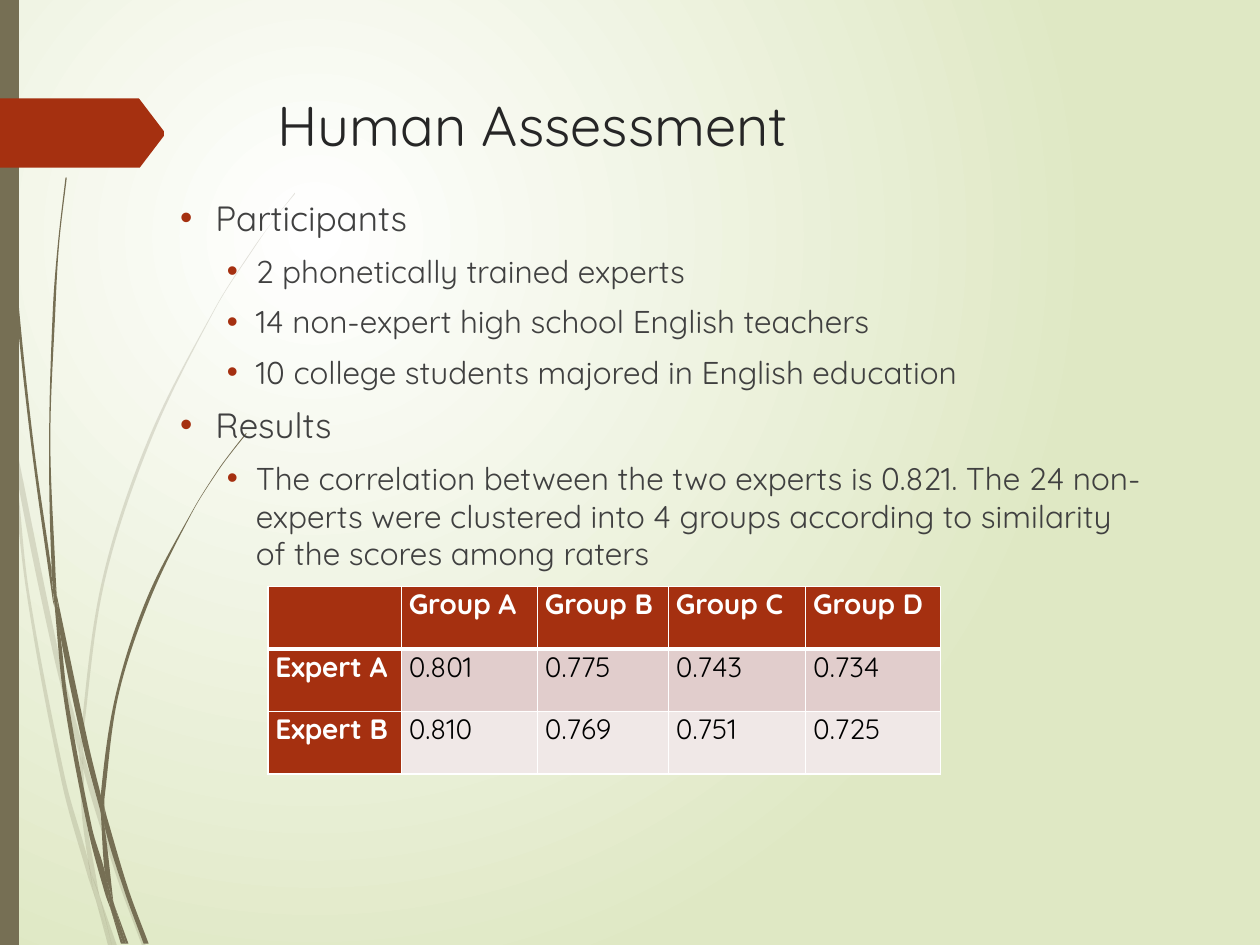
from dataclasses import dataclass
from math import dist

from lxml import etree
from pptx import Presentation
from pptx.dml.color import RGBColor
from pptx.enum.shapes import MSO_SHAPE
from pptx.enum.text import MSO_ANCHOR, MSO_AUTO_SIZE, PP_ALIGN
from pptx.oxml.ns import qn
from pptx.util import Emu, Inches, Pt

RECTANGLE = MSO_SHAPE.RECTANGLE
TOP, NO_FIT = MSO_ANCHOR.TOP, MSO_AUTO_SIZE.NONE
LEFT, JUSTIFY = PP_ALIGN.LEFT, PP_ALIGN.JUSTIFY

FONT = "Quicksand"
WHITE = RGBColor(0xFF, 0xFF, 0xFF)
BLACK = RGBColor(0, 0, 0)
PALE_GREEN = RGBColor(0xDF, 0xE8, 0xC4)
OLIVE = RGBColor(0x76, 0x6F, 0x54)
RUST = RGBColor(0xA5, 0x30, 0x10)
TITLE_GRAY = RGBColor(0x26, 0x26, 0x26)
BODY_GRAY = RGBColor(0x40, 0x40, 0x40)
BAND_FILLS = (RGBColor(0xE1, 0xCD, 0xCC), RGBColor(0xF0, 0xE8, 0xE7))

WIDTH, HEIGHT = Inches(10), Inches(7.5)
Points = list[tuple[float, float]]


@dataclass(frozen=True)
class Frame:
    """A box in percent of the slide's width and height."""
    left: float
    top: float
    width: float
    height: float

    def lengths(self) -> tuple[Emu, Emu, Emu, Emu]:
        return (Emu(int(WIDTH * self.left / 100)), Emu(int(HEIGHT * self.top / 100)),
                Emu(int(WIDTH * self.width / 100)), Emu(int(HEIGHT * self.height / 100)))


@dataclass(frozen=True)
class Blade:
    """A blade of grass: one edge out, the other edge back, in inches."""
    out: Points
    back: Points


@dataclass(frozen=True)
class Level:
    size: int
    margin: float
    hanging: float


TITLE_FRAME = Frame(21.3, 9.07, 73.1, 18.67)
BODY_FRAME = Frame(13.6, 20.27, 77.9, 61.87)
TABLE_FRAME = Frame(21.25, 62.07, 53.4, 19.87)
BAR_FRAME = Frame(0, 0, 1.5, 100)
TAG = [(0, 0.78), (1.1, 0.78), (1.11, 0.79), (1.3, 1.04), (1.3, 1.08), (1.11, 1.33), (0, 1.33)]

LEVELS = (Level(20, 0.28, 0.28), Level(18, 0.6, 0.23))
BODY = (
    (0, "Participants"),
    (1, "2 phonetically trained experts"),
    (1, "14 non-expert high school English teachers"),
    (1, "10 college students majored in English education"),
    (0, "Results"),
    (1, "The correlation between the two experts is 0.821. The 24 non-experts were clustered "
        "into 4 groups according to similarity of the scores among raters"),
)
COLUMNS = (1.06, 1.08, 1.04, 1.09, 1.07)
SCORES = (
    ("", "Group A", "Group B", "Group C", "Group D"),
    ("Expert A", "0.801", "0.775", "0.743", "0.734"),
    ("Expert B", "0.810", "0.769", "0.751", "0.725"),
)

FAINT_GRASS = (
    Blade([(0.08, 3.5), (0.06, 3.22), (0, 2.82)], [(0, 2.99), (0.08, 3.44)]),
    Blade([(0.11, 3.45), (0.13, 3.76), (0.43, 5.22), (0.63, 5.99)],
          [(0.64, 5.86), (0.47, 5.2), (0.11, 3.45)]),
    Blade([(0.66, 5.96), (0.66, 6.1), (0.92, 6.94), (1.13, 7.51)],
          [(1.16, 7.51), (0.95, 6.92), (0.69, 6.07)]),
    Blade([(0.79, 7.11), (0.89, 7.51)], [(0.93, 7.51), (0.79, 7.11)]),
    Blade([(0.08, 3.5), (0.21, 4.7), (0.49, 6.21), (0.69, 6.93), (0.76, 7.14)],
          [(0.74, 7.07), (0.7, 6.83), (0.52, 6.19), (0.23, 4.69), (0.13, 3.76), (0.08, 3.5)]),
    Blade([(0.63, 5.99), (0.65, 6.46), (0.7, 6.83), (0.72, 6.92), (0.79, 7.11)],
          [(0.78, 7.06), (0.68, 6.46), (0.66, 6.1), (0.63, 5.99)]),
    Blade([(0.66, 5.96), (0.66, 5.84), (0.83, 4.62), (1.2, 3.49), (1.71, 2.45), (2.01, 1.98),
           (2.17, 1.75), (2.34, 1.54)],
          [(2.34, 1.53), (2.17, 1.75), (2.01, 1.97), (1.71, 2.44), (1.18, 3.48), (0.81, 4.61),
           (0.64, 5.84), (0.66, 5.96)]),
    Blade([(0.76, 7.14), (0.86, 7.51)], [(0.89, 7.51), (0.76, 7.14)]),
    Blade([(0.66, 6.1), (0.66, 5.96)], [(0.64, 5.86), (0.63, 5.99), (0.66, 6.08)]),
    Blade([(0.7, 6.83), (0.74, 7.07), (0.76, 7.14), (0.89, 7.51)],
          [(0.89, 7.51), (0.79, 7.11), (0.72, 6.92), (0.7, 6.83)]),
)
DARK_GRASS = (
    Blade([(0.02, 0), (0.03, 0.48), (0.05, 1.1), (0.12, 2.33), (0.25, 3.55), (0.42, 4.77),
           (0.43, 4.81)],
          [(0.41, 4.57), (0.41, 4.53), (0.27, 3.55), (0.14, 2.32), (0.06, 1.09), (0.03, 0.48),
           (0.03, 0)]),
    Blade([(0.45, 4.72), (0.48, 5.05), (0.66, 5.92), (0.8, 6.45)],
          [(0.8, 6.31), (0.7, 5.9), (0.45, 4.72)]),
    Blade([(0.83, 6.41), (0.83, 6.56), (0.99, 7.08), (1.14, 7.49)],
          [(1.18, 7.49), (1.02, 7.06), (0.85, 6.49), (0.83, 6.41)]),
    Blade([(0.43, 4.77), (0.51, 5.57), (0.7, 6.59), (0.83, 7.08), (0.88, 7.22)],
          [(0.87, 7.17), (0.83, 6.91), (0.73, 6.57), (0.54, 5.56), (0.48, 5.05), (0.43, 4.77)]),
    Blade([(0.45, 4.72), (0.44, 4.53), (0.4, 3.49), (0.44, 2.45), (0.47, 1.93), (0.53, 1.41)],
          [(0.52, 1.41), (0.46, 1.93), (0.42, 2.45), (0.39, 3.49), (0.41, 4.49), (0.45, 4.72)]),
    Blade([(0.91, 7.19), (1, 7.49)], [(1.02, 7.49), (0.91, 7.19)]),
    Blade([(0.41, 4.49), (0.41, 4.53), (0.43, 4.77), (0.48, 5.05)],
          [(0.45, 4.72), (0.41, 4.49)]),
    Blade([(0.83, 6.41), (0.83, 6.33), (0.94, 5.52), (1.19, 4.76), (1.53, 4.06), (1.73, 3.74),
           (1.84, 3.59), (1.96, 3.44)],
          [(1.95, 3.44), (1.84, 3.58), (1.73, 3.73), (1.53, 4.05), (1.17, 4.74), (0.92, 5.51),
           (0.8, 6.31), (0.83, 6.41)]),
    Blade([(0.88, 7.22), (0.96, 7.49)], [(0.98, 7.49), (0.88, 7.22)]),
    Blade([(0.8, 6.45), (0.83, 6.91), (0.87, 7.06), (0.91, 7.19)],
          [(0.9, 7.16), (0.83, 6.56), (0.8, 6.45)]),
    Blade([(0.8, 6.31), (0.8, 6.45), (0.83, 6.56)], [(0.83, 6.41), (0.8, 6.31)]),
    Blade([(0.83, 6.91), (0.87, 7.17), (0.88, 7.22), (0.98, 7.49)],
          [(1, 7.49), (0.91, 7.19), (0.87, 7.06), (0.83, 6.91)]),
)


def handles(edge: Points) -> list[Points]:
    """Give the two curve handles of each stretch, so that the edge runs smoothly."""
    padded = [edge[0], *edge, edge[-1]]
    pairs = []
    for a, b, c, d in zip(padded, padded[1:], padded[2:], padded[3:]):
        reach = dist(b, c) / 3
        first = tuple(q + (r - p) * reach / dist(a, c) for p, q, r in zip(a, b, c))
        second = tuple(r - (s - q) * reach / dist(b, d) for q, r, s in zip(b, c, d))
        pairs.append([first, second])
    return pairs


def paint(shape, color: RGBColor, opacity: int = 100) -> None:
    shape.shadow.inherit = False
    shape.line.fill.background()
    shape.fill.solid()
    shape.fill.fore_color.rgb = color
    if opacity < 100:
        fill_color = shape.fill._xPr.find(qn("a:solidFill"))[0]
        etree.SubElement(fill_color, qn("a:alpha"), val=str(opacity * 1000))


def draw_outline(slide, points: Points, color: RGBColor, opacity: int = 100):
    corners = [(Inches(x), Inches(y)) for x, y in points]
    builder = slide.shapes.build_freeform(*corners[0])
    builder.add_line_segments(corners[1:], close=True)
    shape = builder.convert_to_shape()
    paint(shape, color, opacity)
    return shape


def draw_blade(slide, blade: Blade, opacity: int) -> None:
    shape = draw_outline(slide, blade.out + blade.back, OLIVE, opacity)
    lines = list(shape._element.iter(qn("a:lnTo")))
    # The line between the two edges stays straight
    for line, pair in zip(lines, [*handles(blade.out), None, *handles(blade.back)]):
        if pair:
            line.tag = qn("a:cubicBezTo")
            for index, (x, y) in enumerate(pair):
                line.insert(index, etree.Element(qn("a:pt"), x=str(Inches(x) - shape.left),
                                                 y=str(Inches(y) - shape.top)))


def add_run(paragraph, text: str, size: int, color: RGBColor, bold: bool = False) -> None:
    run = paragraph.add_run()
    run.text = text
    run.font.name, run.font.size, run.font.bold = FONT, Pt(size), bold
    run.font.color.rgb = color


def place(slide, placeholder, frame: Frame):
    placeholder.left, placeholder.top, placeholder.width, placeholder.height = frame.lengths()
    slide.shapes._spTree.append(placeholder._element)
    text_frame = placeholder.text_frame
    text_frame.margin_left = text_frame.margin_right = Inches(0.07)
    text_frame.margin_top = text_frame.margin_bottom = Inches(0.04)
    text_frame.vertical_anchor, text_frame.auto_size = TOP, NO_FIT
    text_frame.word_wrap = True
    return text_frame


def add_bullet(paragraph, depth: int, text: str) -> None:
    level = LEVELS[depth]
    paragraph.level, paragraph.alignment, paragraph.space_before = depth, LEFT, Pt(7.4)
    properties = paragraph._p.get_or_add_pPr()
    properties.set("marL", str(Inches(level.margin)))
    properties.set("indent", str(-Inches(level.hanging)))
    bullet_color = etree.SubElement(properties, qn("a:buClr"))
    etree.SubElement(bullet_color, qn("a:srgbClr"), val=str(RUST))
    etree.SubElement(properties, qn("a:buFont"), typeface="Arial")
    etree.SubElement(properties, qn("a:buChar"), char="•")
    add_run(paragraph, text, level.size, BODY_GRAY)


def fill_cell(cell, text: str, row: int, column: int) -> None:
    heading = row == 0 or column == 0
    cell.margin_left = cell.margin_right = Inches(0.06)
    cell.margin_top = cell.margin_bottom = 0
    cell.vertical_anchor = TOP
    cell.fill.solid()
    cell.fill.fore_color.rgb = RUST if heading else BAND_FILLS[row - 1]
    paragraph = cell.text_frame.paragraphs[0]
    paragraph.alignment = JUSTIFY
    if text:
        add_run(paragraph, text, 16, WHITE if heading else BLACK, heading)
    # White borders, heavier under the header row
    points = {"lnL": 1, "lnR": 1, "lnT": 3 if row == 1 else 1, "lnB": 3 if row == 0 else 1}
    for index, (side, width) in enumerate(points.items()):
        border = etree.Element(qn(f"a:{side}"), w=str(Pt(width)))
        line_fill = etree.SubElement(border, qn("a:solidFill"))
        etree.SubElement(line_fill, qn("a:srgbClr"), val=str(WHITE))
        cell._tc.get_or_add_tcPr().insert(index, border)


def set_background(slide) -> None:
    fill = slide.background.fill
    fill.gradient()
    for stop, color, position in zip(fill.gradient_stops, (WHITE, PALE_GREEN), (0, 1)):
        stop.color.rgb, stop.position = color, position
    gradient = slide._element.find(f".//{qn('a:gradFill')}")
    gradient.remove(gradient.find(qn("a:lin")))
    circle = etree.SubElement(gradient, qn("a:path"), path="circle")
    etree.SubElement(circle, qn("a:fillToRect"), l="50000", t="50000", r="100000", b="100000")


def main() -> None:
    presentation = Presentation()
    presentation.slide_width, presentation.slide_height = WIDTH, HEIGHT
    slide = presentation.slides.add_slide(presentation.slide_layouts[1])
    set_background(slide)

    # Grass, side bar and tag
    for blades, opacity in ((FAINT_GRASS, 20), (DARK_GRASS, 100)):
        for blade in blades:
            draw_blade(slide, blade, opacity)
    paint(slide.shapes.add_shape(RECTANGLE, *BAR_FRAME.lengths()), OLIVE)
    draw_outline(slide, TAG, RUST)

    # Title and list
    title = place(slide, slide.shapes.title, TITLE_FRAME).paragraphs[0]
    title.alignment = LEFT
    add_run(title, "Human Assessment", 32, TITLE_GRAY)
    body = place(slide, slide.placeholders[1], BODY_FRAME)
    for index, (depth, text) in enumerate(BODY):
        add_bullet(body.add_paragraph() if index else body.paragraphs[0], depth, text)

    # Score table
    table = slide.shapes.add_table(len(SCORES), len(COLUMNS), *TABLE_FRAME.lengths()).table
    for column, width in zip(table.columns, COLUMNS):
        column.width = Inches(width)
    for row, texts in enumerate(SCORES):
        for column, text in enumerate(texts):
            fill_cell(table.cell(row, column), text, row, column)
    presentation.save("out.pptx")


if __name__ == "__main__":
    main()
